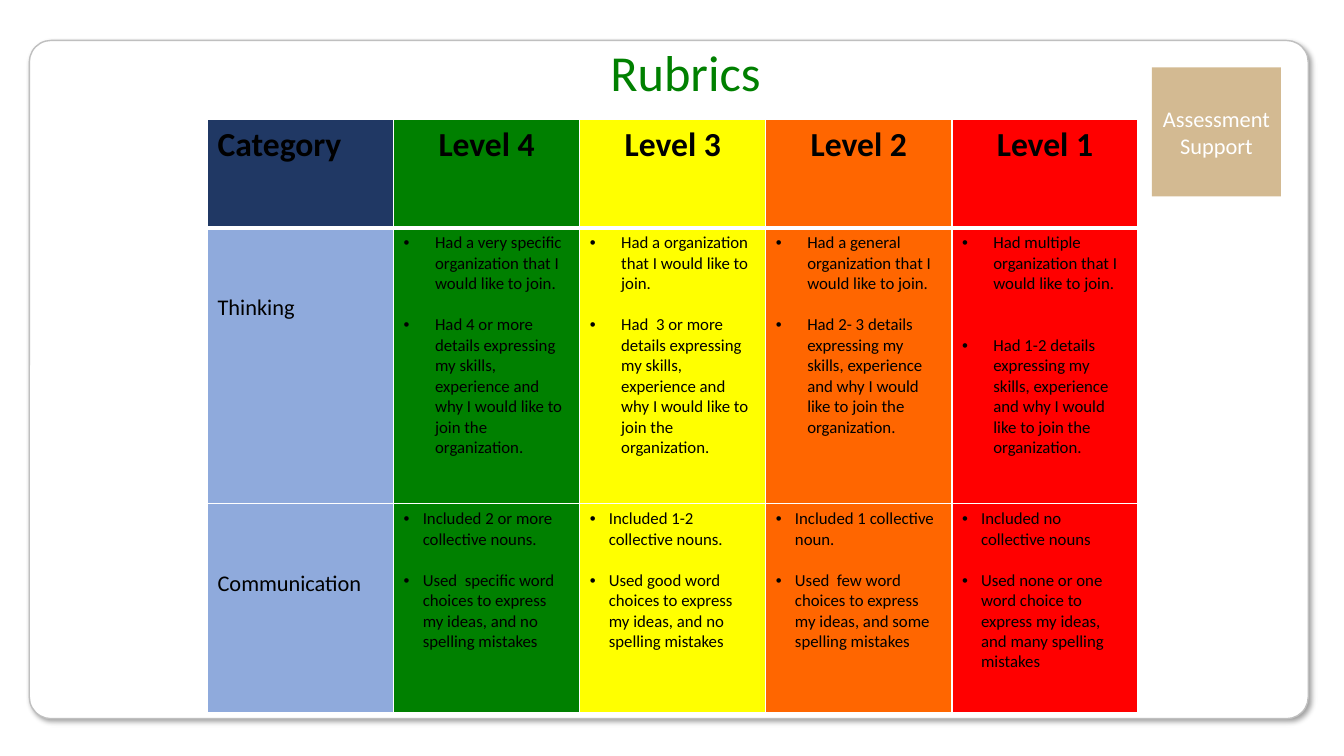
from pptx import Presentation
from pptx.dml.color import RGBColor
from pptx.enum.shapes import MSO_SHAPE as Shape
from pptx.enum.text import MSO_ANCHOR as Anchor, PP_ALIGN as Align
from pptx.oxml import parse_xml
from pptx.oxml.ns import nsdecls
from pptx.util import Cm, Pt


def color(code):
    return RGBColor.from_string(code)


def write(para, text, size, ink="000000", bold=False, align=Align.LEFT, indent=0, before=0):
    if indent:
        props = para._p.get_or_add_pPr()
        props.set("marL", str(Cm(indent)))
        props.set("indent", str(-Cm(indent)))
        for tag in ('buFont {} typeface="Arial"', 'buChar {} char="•"'):
            props.append(parse_xml(f"<a:{tag.format(nsdecls('a'))}/>"))
    para.alignment = align
    para.space_before = Pt(before)
    span = para.add_run()
    span.text = text
    span.font.name = "Calibri"
    span.font.size = Pt(size)
    span.font.bold = bold
    span.font.color.rgb = color(ink)


LINE_12 = 14.65
LEVELS = [("Level 4", "008000"), ("Level 3", "FFFF00"), ("Level 2", "FF6600"), ("Level 1", "FF0000")]
DETAILS = "expressing my skills, experience and why I would like to join the organization."
CRITERIA = [
    ("Thinking", 0.79, [
        ("Had a very specific organization that I would like to join.", f"Had 4 or more details {DETAILS}", 1),
        ("Had a organization that I would like to join.", f"Had  3 or more details {DETAILS}", 1),
        ("Had a general organization that I would like to join.", f"Had 2- 3 details {DETAILS}", 1),
        ("Had multiple organization that I would like to join.", f"Had 1-2 details {DETAILS}", 2),
    ]),
    ("Communication", 0.48, [
        ("Included 2 or more collective nouns.",
         "Used  specific word choices to express my ideas, and no spelling mistakes", 1),
        ("Included 1-2 collective nouns.",
         "Used good word choices to express my ideas, and no spelling mistakes", 1),
        ("Included 1 collective noun.",
         "Used  few word choices to express my ideas, and some spelling mistakes", 1),
        ("Included no collective nouns",
         "Used none or one word choice to express my ideas, and many spelling mistakes", 1),
    ]),
]

deck = Presentation()
deck.slide_width, deck.slide_height = Cm(33.87), Cm(19.05)
page = deck.slides.add_slide(deck.slide_layouts[5])

frame = page.shapes.add_shape(Shape.ROUNDED_RECTANGLE, Cm(0.74), Cm(1.02), Cm(32.23), Cm(17.09))
frame.adjustments[0] = 0.032
frame.fill.solid()
frame.fill.fore_color.rgb = color("FFFFFF")
frame.line.color.rgb = color("BFBFBF")
frame.line.width = Pt(1)
frame.element.spPr.append(parse_xml(
    f'<a:effectLst {nsdecls("a")}><a:outerShdw blurRad="{Pt(4)}" dist="{Pt(3)}" dir="2700000" '
    'algn="tl" rotWithShape="0"><a:srgbClr val="000000"><a:alpha val="40000"/></a:srgbClr>'
    '</a:outerShdw></a:effectLst>'))

support = page.shapes.add_shape(Shape.RECTANGLE, Cm(29.03), Cm(1.7), Cm(3.25), Cm(3.25))
support.shadow.inherit = False
support.fill.solid()
support.fill.fore_color.rgb = color("D3BA92")
support.line.fill.background()
support.text_frame.vertical_anchor = Anchor.MIDDLE
write(support.text_frame.paragraphs[0], "Assessment Support", 16, "FFFFFF", align=Align.CENTER)

rubric = page.shapes.add_table(3, 5, Cm(5.23), Cm(3), Cm(23.45), Cm(14.95)).table
for column in rubric.columns:
    column.width = Cm(4.69)
for row, height in zip(rubric.rows, (2.74, 6.95, 5.26)):
    row.height = Cm(height)

fills = [fill for _, fill in LEVELS]
for row_index, row in enumerate(rubric.rows):
    for cell, fill in zip(row.cells, ["8FAADC" if row_index else "203864"] + fills):
        props = cell._tc.get_or_add_tcPr()
        for side in "LRTB":
            heavy = (row_index, side) in ((0, "B"), (1, "T"))
            props.append(parse_xml(
                f'<a:ln{side} {nsdecls("a")} w="{Pt(3 if heavy else 1)}"><a:solidFill>'
                f'<a:srgbClr val="FFFFFF"/></a:solidFill></a:ln{side}>'))
        cell.fill.solid()
        cell.fill.fore_color.rgb = color(fill)

write(rubric.cell(0, 0).text_frame.paragraphs[0], "Category", 24, bold=True)
for column, (level, _) in enumerate(LEVELS, 1):
    write(rubric.cell(0, column).text_frame.paragraphs[0], level, 24, bold=True, align=Align.CENTER)

for row, (criterion, indent, descriptions) in enumerate(CRITERIA, 1):
    label = rubric.cell(row, 0)
    label.margin_top = Cm(1.68)
    write(label.text_frame.paragraphs[0], criterion, 16)
    for column, (first, second, gap) in enumerate(descriptions, 1):
        body = rubric.cell(row, column).text_frame
        write(body.paragraphs[0], first, 12, indent=indent)
        write(body.add_paragraph(), second, 12, indent=indent, before=gap * LINE_12)

title = page.shapes.title
title.left, title.top, title.width, title.height = Cm(6.43), Cm(0.91), Cm(21.69), Cm(1.8)
title.text_frame.vertical_anchor = Anchor.MIDDLE
write(title.text_frame.paragraphs[0], "Rubrics", 36, "008000", align=Align.CENTER)
title.element.getparent().append(title.element)

deck.save("out.pptx")
